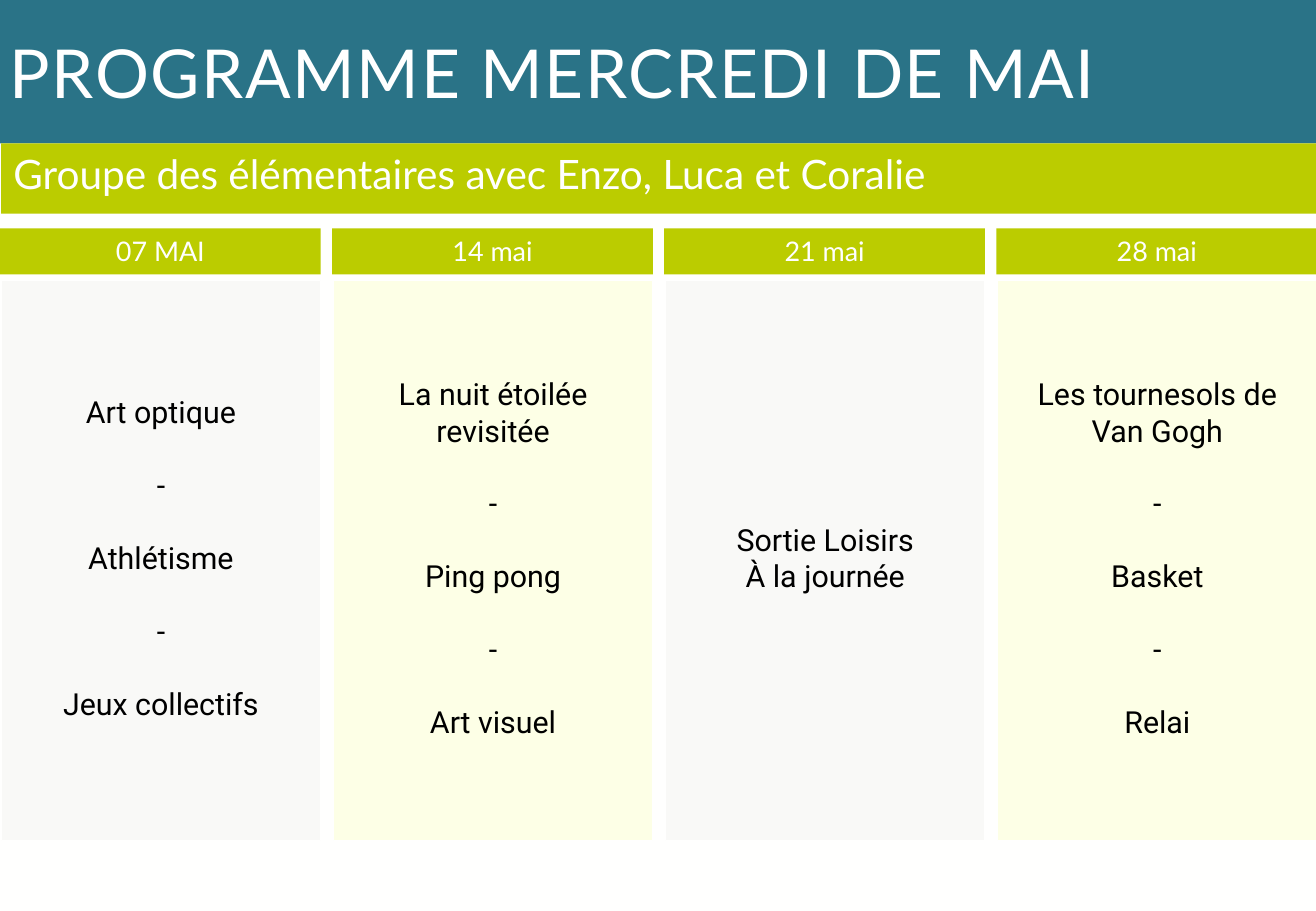
from pptx import Presentation
from pptx import util as u
from pptx.dml.color import RGBColor
from pptx.enum import shapes, text
from pptx.oxml.ns import qn
from lxml import etree

COLORS = {
    "paper": "FFFFFE",
    "white": "FFFFFF",
    "black": "000000",
    "banner": "2A7387",
    "accent": "BBCC00",
    "grey": "EEECE8",
    "yellow": "FAFFC2",
}
PANEL_STYLES = [("grey", 30), ("yellow", 40)]
WEDNESDAYS = [
    ("07 MAI", ["Art optique", "-", "Athlétisme", "-", "Jeux collectifs"], 21.6),
    ("14 mai", ["La nuit étoilée revisitée", "-", "Ping pong", "-", "Art visuel"], 21.6),
    ("21 mai", ["Sortie Loisirs", "À la journée"], 0),
    ("28 mai", ["Les tournesols de Van Gogh", "-", "Basket", "-", "Relai"], 21.6),
]


def place(shape, left, top, width, height):
    """Move and size a shape, in inches."""
    shape.left, shape.top = u.Inches(left), u.Inches(top)
    shape.width, shape.height = u.Inches(width), u.Inches(height)


def paint(fill, color, opacity=100):
    """Fill with a palette colour at the given opacity in percent."""
    fill.solid()
    fill.fore_color.rgb = RGBColor.from_string(COLORS[color])
    if opacity < 100:
        color_element = fill._xPr.find(qn("a:solidFill"))[0]
        etree.SubElement(color_element, qn("a:alpha"), val=str(opacity * 1000))


def write(shape, lines, font, size, color, align, anchor, gap=0):
    """Set the lines of a shape and format them alike."""
    frame = shape.text_frame
    frame.text = "\n".join(lines)
    frame.word_wrap = True
    frame.auto_size = text.MSO_AUTO_SIZE.NONE
    frame.vertical_anchor = anchor
    for index, paragraph in enumerate(frame.paragraphs):
        properties = paragraph._p.get_or_add_pPr()
        properties.set("marL", "0")
        properties.set("indent", "0")
        etree.SubElement(properties, qn("a:buNone"))
        paragraph.alignment = align
        paragraph.space_before = u.Pt(gap if index else 0)
        for run in paragraph.runs:
            run.font.name = font
            run.font.size = u.Pt(size)
            run.font.color.rgb = RGBColor.from_string(COLORS[color])


def add_box(slide, left, top, width, height, color, opacity=100):
    """Add a filled rectangle without shadow or outline."""
    shape = slide.shapes.add_shape(
        shapes.MSO_SHAPE.RECTANGLE,
        u.Inches(left), u.Inches(top), u.Inches(width), u.Inches(height))
    shape.shadow.inherit = False
    paint(shape.fill, color, opacity)
    shape.line.fill.background()
    return shape


def build_heading(slide, left, top, width):
    """Lay out the title banner and the group band below it."""
    title, group = slide.shapes.title, slide.placeholders[1]
    place(title, left - 0.02, top, width + 0.03, 1.18)
    paint(title.fill, "banner")
    write(title, ["PROGRAMME MERCREDI DE MAI"], "Lato", 40, "white",
          text.PP_ALIGN.LEFT, text.MSO_ANCHOR.MIDDLE)
    title.text_frame.paragraphs[0].runs[0].font._element.set("spc", "100")
    place(group, left + 0.01, top + 1.18, width, 0.58)
    paint(group.fill, "accent")
    write(group, ["Groupe des élémentaires avec Enzo, Luca et Coralie"],
          "Lato", 24, "paper", text.PP_ALIGN.LEFT, text.MSO_ANCHOR.TOP)


def build_day(slide, left, top, width, height, day, panel_style):
    """Lay out one Wednesday: date header above its activity panel."""
    date, activities, gap = day
    panel = add_box(slide, left + 0.01, top + 0.43, width - 0.01,
                    height - 0.43, *panel_style)
    paint(panel.line.fill, "paper")
    panel.line.width = u.Pt(0.75)
    panel.text_frame.margin_bottom = u.Inches(0.1)
    write(panel, activities, "Roboto", 18, "black",
          text.PP_ALIGN.CENTER, text.MSO_ANCHOR.MIDDLE, gap)
    header = add_box(slide, left, top, width, 0.38, "accent")
    write(header, [date], "Lato", 16, "paper",
          text.PP_ALIGN.CENTER, text.MSO_ANCHOR.TOP)


def build_calendar(slide, left, top, width, height):
    """Spread the Wednesdays in equal columns."""
    column = 2.64
    pitch = (width - column) / (len(WEDNESDAYS) - 1)
    for index, day in enumerate(WEDNESDAYS):
        build_day(slide, left + index * pitch, top, column, height, day,
                  PANEL_STYLES[index % len(PANEL_STYLES)])


def main():
    """Build and save the programme."""
    presentation = Presentation()
    presentation.slide_width = u.Inches(10.83)
    presentation.slide_height = u.Inches(7.5)
    slide = presentation.slides.add_slide(presentation.slide_layouts[1])
    paint(slide.background.fill, "paper")
    build_heading(slide, 0, 0, 10.83)
    build_calendar(slide, 0, 1.88, 10.84, 5.04)
    presentation.save("out.pptx")


if __name__ == "__main__":
    main()
